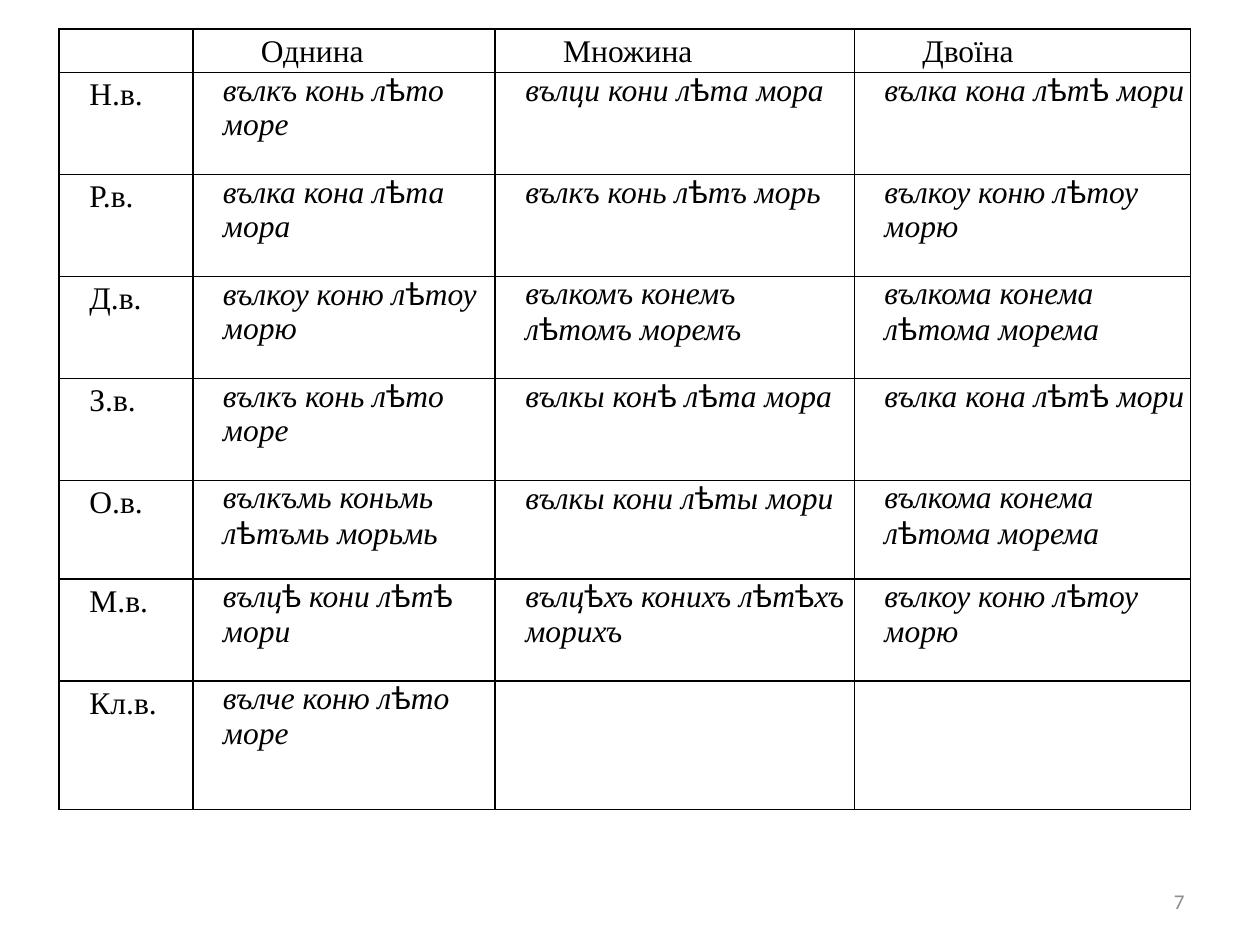
from itertools import groupby

from lxml.etree import SubElement
from pptx import Presentation
from pptx.dml.color import RGBColor
from pptx.enum.text import MSO_ANCHOR, PP_ALIGN
from pptx.oxml.ns import qn
from pptx.util import Inches, Pt

BLACK = RGBColor(0x00, 0x00, 0x00)
GRAY = RGBColor(0x8C, 0x8C, 0x8C)
YAT = "ѣ"

COL_WIDTHS = [1.06, 2.4, 2.85, 2.67]
ROW_HEIGHTS = [0.31, 0.81, 0.81, 0.81, 0.81, 0.78, 0.81, 1.02]
DECLENSION = [
    ["", "Однина", "Множина", "Двоїна"],
    ["Н.в.", "вълкъ конь лѣто море", "вълци кони лѣта мора", "вълка кона лѣтѣ мори"],
    ["Р.в.", "вълка кона лѣта мора", "вълкъ конь лѣтъ морь", "вълкоу коню лѣтоу морю"],
    ["Д.в.", "вълкоу коню лѣтоу морю", "вълкомъ конемъ лѣтомъ моремъ",
     "вълкома конема лѣтома морема"],
    ["З.в.", "вълкъ конь лѣто море", "вълкы конѣ лѣта мора", "вълка кона лѣтѣ мори"],
    ["О.в.", "вълкъмь коньмь лѣтъмь морьмь", "вълкы кони лѣты мори",
     "вълкома конема лѣтома морема"],
    ["М.в.", "вълцѣ кони лѣтѣ мори", "вълцѣхъ конихъ лѣтѣхъ морихъ",
     "вълкоу коню лѣтоу морю"],
    ["Кл.в.", "вълче коню лѣто море", "", ""],
]


def format_run(r, size, name, color, italic=False):
    r.font.size = Pt(size)
    r.font.name = name
    r.font.color.rgb = color
    r.font.italic = italic


def set_borders(cell):
    tc_pr = cell._tc.get_or_add_tcPr()
    for side in ("a:lnL", "a:lnR", "a:lnT", "a:lnB"):
        ln = SubElement(tc_pr, qn(side), w=str(Pt(1)))
        fill = SubElement(ln, qn("a:solidFill"))
        SubElement(fill, qn("a:srgbClr"), val=str(BLACK))


def fill_cell(cell, text, is_header, is_label):
    cell.margin_left = cell.margin_right = Inches(0.04)
    cell.margin_top = cell.margin_bottom = 0
    set_borders(cell)
    cell.fill.background()
    if not text:
        return
    p = cell.text_frame.paragraphs[0]
    p._p.get_or_add_pPr().set("marL", str(Inches(0.5 if is_header else 0.2)))
    is_form = not (is_header or is_label)
    p.line_spacing = 1.0 if is_form else 1.15
    # The letter yat is upright Arial inside the italic word forms
    for is_yat, letters in groupby(text, key=lambda letter: letter == YAT):
        r = p.add_run()
        r.text = "".join(letters)
        format_run(r, 18, "Arial" if is_yat else "Times New Roman", BLACK,
                   is_form and not is_yat)


def add_declension_table(slide, left, top, width, height):
    table = slide.shapes.add_table(len(DECLENSION), len(COL_WIDTHS),
                                   left, top, width, height).table
    table.first_row = table.horz_banding = False
    for column, col_width in zip(table.columns, COL_WIDTHS):
        column.width = Inches(col_width)
    for row, row_height in zip(table.rows, ROW_HEIGHTS):
        row.height = Inches(row_height)
    for i, texts in enumerate(DECLENSION):
        for j, text in enumerate(texts):
            fill_cell(table.cell(i, j), text, i == 0, j == 0)


def add_page_number(slide, left, top, width, height):
    tf = slide.shapes.add_textbox(left, top, width, height).text_frame
    tf.word_wrap = True
    tf.vertical_anchor = MSO_ANCHOR.MIDDLE
    p = tf.paragraphs[0]
    p.text = "7"
    p.alignment = PP_ALIGN.RIGHT
    format_run(p.runs[0], 12, "Calibri", GRAY)


def main():
    prs = Presentation()
    prs.slide_width, prs.slide_height = Inches(10), Inches(7.5)
    slide = prs.slides.add_slide(prs.slide_layouts[6])
    add_page_number(slide, Inches(7.17), Inches(6.95), Inches(2.33), Inches(0.4))
    add_declension_table(slide, Inches(0.47), Inches(0.23),
                         Inches(sum(COL_WIDTHS)), Inches(sum(ROW_HEIGHTS)))
    prs.save("out.pptx")


if __name__ == "__main__":
    main()
